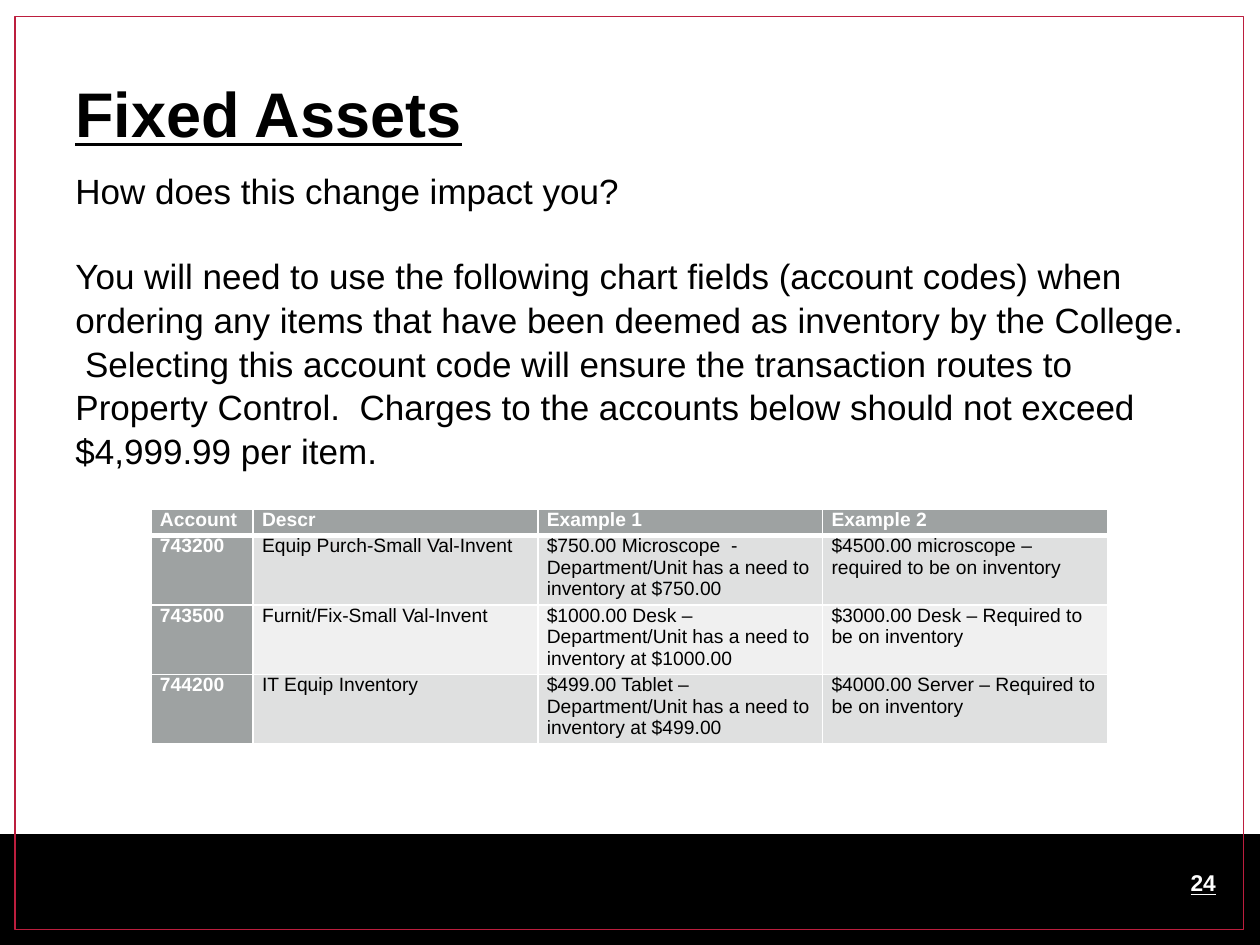
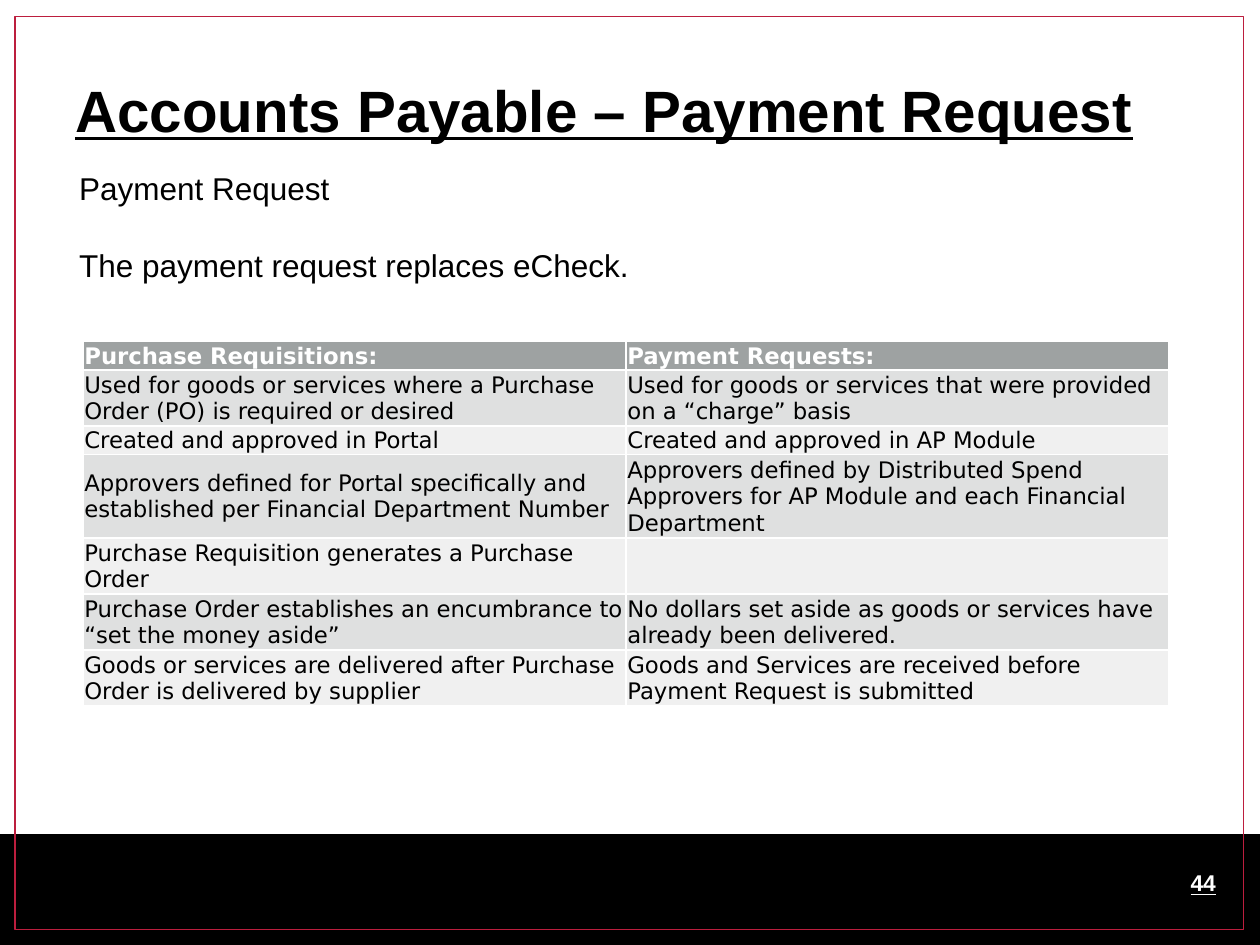
from pptx import Presentation
from pptx.dml.color import RGBColor
from pptx.enum.shapes import MSO_SHAPE
from pptx.enum.text import MSO_ANCHOR
from pptx.oxml import parse_xml
from pptx.oxml.ns import nsdecls
from pptx.util import Inches, Pt

WIDTH, HEIGHT = 10, 7.5
COLOURS = {"ink": "000000", "paper": "FFFFFF", "frame": "BC1E3E",
           "heading": "9EA2A2", "odd": "DFE0E0", "even": "F0F0F0"}

SLIDES = [
    {
        "number": "24",
        "title": ("Fixed Assets", 36),
        "body": [
            "How does this change impact you?",
            "You will need to use the following chart fields (account codes) when ordering any "
            "items that have been deemed as inventory by the College.  Selecting this account "
            "code will ensure the transaction routes to Property Control.  Charges to the "
            "accounts below should not exceed $4,999.99 per item.",
        ],
        "body_left": 0.5, "body_size": 20, "paragraph_gap": 24,
        "table": {
            "at": (1.2, 4.04), "columns": [0.81, 2.26, 2.26, 2.26],
            "heights": [0.21] + [0.51] * 3,
            "font": ("Arial", 11), "margins": (0.07, 0, 0.07, 0),
            "anchor": MSO_ANCHOR.TOP, "heading_rule": 3, "heading_column": True,
            "rows": [
                ("Account", "Descr", "Example 1", "Example 2"),
                ("743200", "Equip Purch-Small Val-Invent",
                 "$750.00 Microscope  - Department/Unit has a need to inventory at $750.00",
                 "$4500.00 microscope – required to be on inventory"),
                ("743500", "Furnit/Fix-Small Val-Invent",
                 "$1000.00 Desk – Department/Unit has a need to inventory at $1000.00",
                 "$3000.00 Desk – Required to be on inventory"),
                ("744200", "IT Equip Inventory",
                 "$499.00 Tablet – Department/Unit has a need to inventory at $499.00",
                 "$4000.00 Server – Required to be on inventory"),
            ],
        },
    },
    {
        "number": "44",
        "title": ("Accounts Payable – Payment Request", 33.3),
        "body": ["Payment Request", "The payment request replaces eCheck."],
        "body_left": 0.53, "body_size": 18, "paragraph_gap": 21.5,
        "table": {
            "at": (0.66, 2.71), "columns": [4.31, 4.31],
            "heights": [0.22 * lines for lines in (1, 2, 1, 3, 2, 2, 2)],
            "font": ("DejaVu Sans", 13), "margins": (0.01, 0.01, 0.01, 0),
            "anchor": MSO_ANCHOR.MIDDLE, "heading_rule": 1.5, "heading_column": False,
            "rows": [
                ("Purchase Requisitions:", "Payment Requests:"),
                ("Used for goods or services where a Purchase Order (PO) is required or desired",
                 "Used for goods or services that were provided on a “charge” basis"),
                ("Created and approved in Portal", "Created and approved in AP Module"),
                ("Approvers defined for Portal specifically and established per Financial "
                 "Department Number",
                 "Approvers defined by Distributed Spend Approvers for AP Module and each "
                 "Financial Department"),
                ("Purchase Requisition generates a Purchase Order", ""),
                ("Purchase Order establishes an encumbrance to “set the money aside”",
                 "No dollars set aside as goods or services have already been delivered."),
                ("Goods or services are delivered after Purchase Order is delivered by supplier",
                 "Goods and Services are received before Payment Request is submitted"),
            ],
        },
    },
]


def colour(name):
    return RGBColor.from_string(COLOURS[name])


def set_font(paragraph, face, size, ink, bold=False, underline=False):
    font = paragraph.font
    font.name, font.size, font.bold = face, Pt(size), bold
    font.underline = underline
    font.color.rgb = colour(ink)


def add_rectangle(slide, box, fill=None, line=None):
    rectangle = slide.shapes.add_shape(MSO_SHAPE.RECTANGLE, *map(Inches, box))
    rectangle.shadow.inherit = False
    if fill:
        rectangle.fill.solid()
        rectangle.fill.fore_color.rgb = colour(fill)
    else:
        rectangle.fill.background()
    if line:
        rectangle.line.color.rgb = colour(line)
        rectangle.line.width = Pt(0.75)
    else:
        rectangle.line.fill.background()


def add_text(slide, box, paragraphs, size, ink="ink", strong=False, gap=0,
             spacing=1.0, anchor=MSO_ANCHOR.TOP):
    frame = slide.shapes.add_textbox(*map(Inches, box)).text_frame
    frame.word_wrap = True
    frame.vertical_anchor = anchor
    frame.text = "\n".join(paragraphs)
    for index, paragraph in enumerate(frame.paragraphs):
        paragraph.line_spacing = spacing
        paragraph.space_before = Pt(gap if index else 0)
        set_font(paragraph, "Arial", size, ink, strong, strong)


def set_borders(cell, top, bottom):
    properties = cell._tc.get_or_add_tcPr()
    for side, points in zip("LRTB", (1, 1, top, bottom)):
        properties.append(parse_xml(
            f'<a:ln{side} {nsdecls("a")} w="{Pt(points)}"><a:solidFill>'
            f'<a:srgbClr val="{COLOURS["paper"]}"/></a:solidFill></a:ln{side}>'))


def add_accounts_table(slide, content):
    rows, columns, heights = content["rows"], content["columns"], content["heights"]
    box = (*content["at"], sum(columns), sum(heights))
    table = slide.shapes.add_table(len(rows), len(columns), *map(Inches, box)).table
    table.horz_banding = False
    for column, width in zip(table.columns, columns):
        column.width = Inches(width)
    for row, height in zip(table.rows, heights):
        row.height = Inches(height)
    rule = content["heading_rule"]
    for r, texts in enumerate(rows):
        for c, text in enumerate(texts):
            cell = table.cell(r, c)
            heading = r == 0 or (c == 0 and content["heading_column"])
            (cell.margin_left, cell.margin_top, cell.margin_right,
             cell.margin_bottom) = map(Inches, content["margins"])
            cell.vertical_anchor = content["anchor"]
            set_borders(cell, rule if r == 1 else 1, rule if r == 0 else 1)
            cell.fill.solid()
            cell.fill.fore_color.rgb = colour("heading" if heading else "odd" if r % 2 else "even")
            cell.text = text
            set_font(cell.text_frame.paragraphs[0], *content["font"],
                     "paper" if heading else "ink", heading)


def add_base(slide, number):
    band_top = 6.62
    add_rectangle(slide, (0, band_top, WIDTH, HEIGHT - band_top), fill="ink")
    add_rectangle(slide, (0.12, 0.13, 9.75, 7.25), line="frame")
    add_text(slide, (9.35, 6.82, 0.62, 0.37), [number], 13, "paper", strong=True,
             anchor=MSO_ANCHOR.MIDDLE)


def main():
    """Build the two accounting slides."""
    deck = Presentation()
    deck.slide_width, deck.slide_height = Inches(WIDTH), Inches(HEIGHT)
    for content in SLIDES:
        slide = deck.slides.add_slide(deck.slide_layouts[6])
        add_base(slide, content["number"])
        title, title_size = content["title"]
        add_text(slide, (0.5, 0.5, 9.02, 0.78), [title], title_size, strong=True, spacing=1.07)
        add_text(slide, (content["body_left"], 1.28, 9.02, 4.8), content["body"],
                 content["body_size"], gap=content["paragraph_gap"], spacing=1.04)
        add_accounts_table(slide, content["table"])
    deck.save("out.pptx")


if __name__ == "__main__":
    main()
